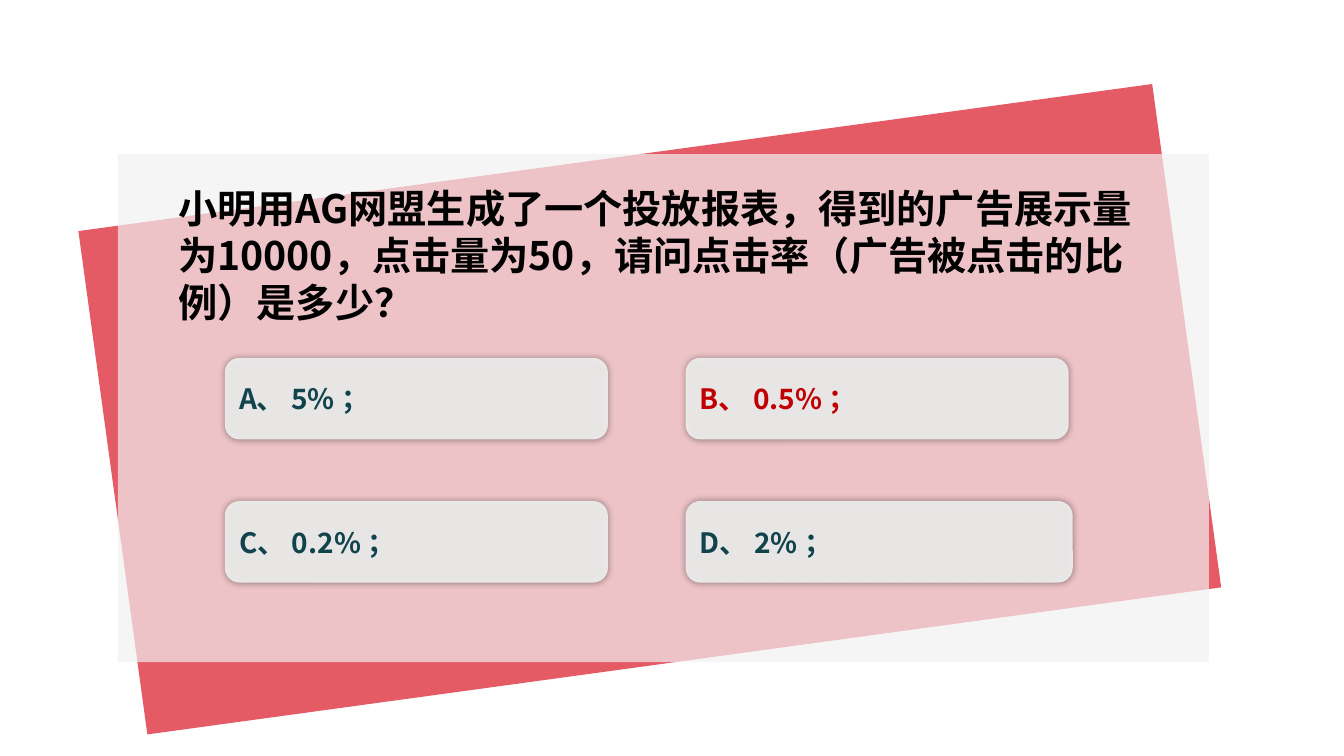
"""Build a quiz slide with one question and four answer cards."""
from lxml import etree
from pptx import Presentation
from pptx.dml.color import RGBColor
from pptx.enum import shapes, text
from pptx.oxml import ns
from pptx.util import Inches, Pt

RED = RGBColor(0xD9, 0x15, 0x24)
PALE = RGBColor(0xF1, 0xF1, 0xF1)
BLACK = RGBColor(0, 0, 0)
TEAL = RGBColor(0x10, 0x43, 0x4C)
ANSWER_RED = RGBColor(0xC0, 0, 0)
FONT = "Noto Sans CJK SC"
QUESTION = ("小明用AG网盟生成了一个投放报表，得到的广告展示量为10000，"
            "点击量为50，请问点击率（广告被点击的比例）是多少？")
LEFT, TOP = (2.23, 6.8), (3.55, 4.97)
OPTIONS = (
    ("A、 5% ；", 0, 0, 3.8, TEAL),
    ("B、 0.5% ；", 1, 0, 3.8, ANSWER_RED),
    ("C、 0.2% ；", 0, 1, 3.8, TEAL),
    ("D、 2% ；", 1, 1, 3.84, TEAL),
)


def add_element(parent, tag, **attributes):
    """Append a DrawingML child element and return it."""
    return etree.SubElement(parent, ns.qn(tag), attributes)


def apply(target, values):
    """Set each named value on the target."""
    for name, value in values.items():
        setattr(target, name, value)


def add_block(slide, kind, box, color, opacity):
    """Add a borderless, partly transparent shape."""
    shape = slide.shapes.add_shape(kind, *map(Inches, box))
    shape.shadow.inherit = False
    shape.fill.solid()
    shape.fill.fore_color.rgb = color
    shape.line.fill.background()
    color_element = shape.fill._xPr.find(".//" + ns.qn("a:srgbClr"))
    add_element(color_element, "a:alpha", val=str(opacity * 1000))
    return shape


def add_glow_shadow(shape):
    """Give a shape an even, soft black shadow."""
    effects = shape._element.spPr.find(ns.qn("a:effectLst"))
    shadow = add_element(effects, "a:outerShdw", blurRad=str(Pt(5)), dist="0",
                         dir="0", algn="ctr", rotWithShape="0")
    color = add_element(shadow, "a:srgbClr", val=str(BLACK))
    add_element(color, "a:alpha", val="40000")


def write_text(shape, wording, size, color, anchor):
    """Write one bold, left-aligned paragraph in a shape."""
    frame = shape.text_frame
    apply(frame, {"word_wrap": True, "vertical_anchor": anchor,
                  "auto_size": text.MSO_AUTO_SIZE.NONE,
                  "margin_left": Inches(0.1), "margin_right": Inches(0.1),
                  "margin_top": Inches(0.05), "margin_bottom": Inches(0.05)})
    paragraph = frame.paragraphs[0]
    paragraph.alignment = text.PP_ALIGN.LEFT
    run = paragraph.add_run()
    run.text = wording
    apply(run.font, {"size": Pt(size), "bold": True, "name": FONT})
    run.font.color.rgb = color
    add_element(run.font._element, "a:ea", typeface=FONT)


def add_question(slide):
    """Place the question in the title placeholder, above the panels."""
    title = slide.shapes.title
    apply(title, {"left": Inches(1.67), "top": Inches(1.78),
                  "width": Inches(9.92), "height": Inches(1.51)})
    write_text(title, QUESTION, 28, BLACK, text.MSO_ANCHOR.TOP)
    slide.shapes._spTree.append(title._element)


def add_option(slide, wording, column, row, width, color):
    """Add one answer card at its place in the grid."""
    card = add_block(slide, shapes.MSO_SHAPE.ROUNDED_RECTANGLE,
                     (LEFT[column], TOP[row], width, 0.81), PALE, 90)
    card.adjustments[0] = 0.18
    add_glow_shadow(card)
    write_text(card, wording, 20, color, text.MSO_ANCHOR.MIDDLE)


def main():
    """Build and save the slide."""
    presentation = Presentation()
    apply(presentation, {"slide_width": Inches(13.33),
                         "slide_height": Inches(7.5)})
    slide = presentation.slides.add_slide(presentation.slide_layouts[5])
    rectangle = shapes.MSO_SHAPE.RECTANGLE
    backdrop = add_block(slide, rectangle, (1.07, 1.54, 10.75, 5.04), RED, 70)
    backdrop.rotation = 352.2
    add_block(slide, rectangle, (1.17, 1.53, 10.82, 5.04), PALE, 70)
    add_question(slide)
    for option in OPTIONS:
        add_option(slide, *option)
    presentation.save("out.pptx")


if __name__ == "__main__":
    main()
